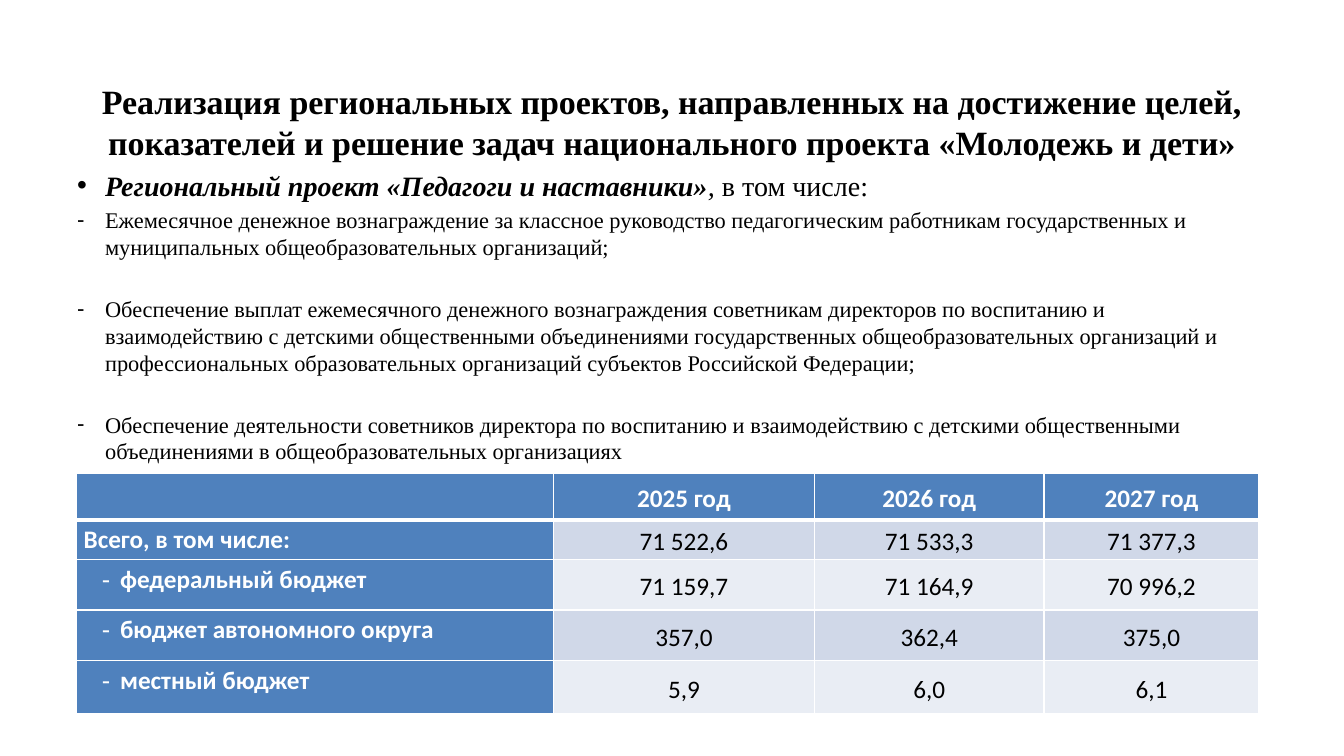
from dataclasses import dataclass

from lxml.etree import SubElement
from pptx import Presentation
from pptx.dml.color import RGBColor
from pptx.enum.text import MSO_ANCHOR, MSO_AUTO_SIZE, PP_ALIGN
from pptx.oxml.ns import qn
from pptx.util import Pt


@dataclass(frozen=True)
class Theme:
    black: RGBColor = RGBColor.from_string("000000")
    white: RGBColor = RGBColor.from_string("FFFFFF")
    header: RGBColor = RGBColor.from_string("4F81BD")
    bands: tuple = (RGBColor.from_string("D0D8E8"), RGBColor.from_string("E9EDF4"))
    serif: str = "Times New Roman"
    sans: str = "Calibri"
    title_size: float = 24.3
    lead_size: float = 20
    item_size: float = 16
    table_size: float = 18


THEME = Theme()

TITLE = ("Реализация региональных проектов, направленных на достижение целей, "
         "показателей и решение задач национального проекта «Молодежь и дети»")
PROJECT = "Региональный проект «Педагоги и наставники»"
MEASURES = [
    "Ежемесячное денежное вознаграждение за классное руководство педагогическим "
    "работникам государственных и муниципальных общеобразовательных организаций;",
    "Обеспечение выплат ежемесячного денежного вознаграждения советникам директоров "
    "по воспитанию и взаимодействию с детскими общественными объединениями "
    "государственных общеобразовательных организаций и профессиональных "
    "образовательных организаций субъектов Российской Федерации;",
    "Обеспечение деятельности советников директора по воспитанию и взаимодействию "
    "с детскими общественными объединениями в общеобразовательных организациях",
]
BUDGET = [
    ["", "2025 год", "2026 год", "2027 год"],
    ["Всего, в том числе:", "71 522,6", "71 533,3", "71 377,3"],
    ["федеральный бюджет", "71 159,7", "71 164,9", "70 996,2"],
    ["бюджет автономного округа", "357,0", "362,4", "375,0"],
    ["местный бюджет", "5,9", "6,0", "6,1"],
]
COLUMN_WIDTHS = [340.5, 186.5, 164, 153.5]
ROW_HEIGHTS = [33.5, 28.5, 36, 36, 38]


def style_span(span, font, size, color, bold=False, italic=False):
    span.font.name = font
    span.font.size = Pt(size)
    span.font.color.rgb = color
    span.font.bold = bold
    span.font.italic = italic


def set_bullet(para, mark, margin, hanging):
    properties = para._p.get_or_add_pPr()
    properties.set("marL", str(Pt(margin)))
    properties.set("indent", str(-Pt(hanging)))
    SubElement(properties, qn("a:buFont"), typeface="Arial")
    SubElement(properties, qn("a:buChar"), char=mark)


def add_title(page, text):
    title = page.shapes.title
    title.left, title.top, title.width, title.height = Pt(48), Pt(21.6), Pt(864), Pt(90)
    frame = title.text_frame
    frame.text = text
    frame.word_wrap = True
    frame.auto_size = MSO_AUTO_SIZE.NONE
    frame.vertical_anchor = MSO_ANCHOR.TOP
    frame.margin_top = Pt(36)
    para = frame.paragraphs[0]
    para.alignment = PP_ALIGN.CENTER
    style_span(para.runs[0], THEME.serif, THEME.title_size, THEME.black, bold=True)


def add_measures(page):
    box = page.shapes.add_textbox(Pt(48), Pt(116.6), Pt(857.5), Pt(408))
    frame = box.text_frame
    frame.word_wrap = True

    # Lead line with the project name emphasised
    lead = frame.paragraphs[0]
    lead.space_before = Pt(4)
    set_bullet(lead, "•", 20, 20)
    for text, bold, italic in [(PROJECT, True, True), (", ", False, True),
                               ("в том числе:", False, False)]:
        span = lead.add_run()
        span.text = text
        style_span(span, THEME.serif, THEME.lead_size, THEME.black, bold, italic)

    # Measures, set apart by paragraph spacing
    for index, text in enumerate(MEASURES):
        para = frame.add_paragraph()
        para.text = text
        para.space_before = Pt(25 if index else 3.2)
        set_bullet(para, "-", 20, 20)
        style_span(para.runs[0], THEME.serif, THEME.item_size, THEME.black)


def set_borders(cell, top, bottom):
    properties = cell._tc.get_or_add_tcPr()
    for position, (side, width) in enumerate(
            [("lnL", 1), ("lnR", 1), ("lnT", top), ("lnB", bottom)]):
        line = properties.makeelement(qn(f"a:{side}"), {"w": str(Pt(width))})
        fill = SubElement(line, qn("a:solidFill"))
        SubElement(fill, qn("a:srgbClr"), val=str(THEME.white))
        properties.insert(position, line)


def fill_cell(cell, text, row, column):
    is_label = column == 0
    is_heading = row == 0 or is_label
    cell.fill.solid()
    cell.fill.fore_color.rgb = THEME.header if is_heading else THEME.bands[(row - 1) % 2]
    set_borders(cell, top=3 if row == 1 else 1, bottom=3 if row == 0 else 1)
    cell.margin_left = cell.margin_right = Pt(5)
    cell.margin_top = cell.margin_bottom = Pt(0)
    cell.vertical_anchor = MSO_ANCHOR.TOP if is_label else MSO_ANCHOR.MIDDLE
    if not text:
        return
    cell.text_frame.text = text
    para = cell.text_frame.paragraphs[0]
    para.alignment = PP_ALIGN.LEFT if is_label else PP_ALIGN.CENTER
    para.line_spacing = 1.15
    para.space_after = Pt(10)
    if is_label and row > 1:
        set_bullet(para, "-", 26, 13)
    color = THEME.white if is_heading else THEME.black
    style_span(para.runs[0], THEME.sans, THEME.table_size, color, bold=is_heading)


def add_budget_table(page):
    frame = page.shapes.add_table(len(BUDGET), len(BUDGET[0]), Pt(54.8), Pt(337.8),
                                  Pt(sum(COLUMN_WIDTHS)), Pt(sum(ROW_HEIGHTS)))
    table = frame.table
    table.first_col = True
    for column, width in zip(table.columns, COLUMN_WIDTHS):
        column.width = Pt(width)
    for row, height in zip(table.rows, ROW_HEIGHTS):
        row.height = Pt(height)
    for row, values in enumerate(BUDGET):
        for column, text in enumerate(values):
            fill_cell(table.cell(row, column), text, row, column)


def main():
    deck = Presentation()
    deck.slide_width, deck.slide_height = Pt(960), Pt(540)
    page = deck.slides.add_slide(deck.slide_layouts[5])
    add_title(page, TITLE)
    add_measures(page)
    add_budget_table(page)
    deck.save("out.pptx")


if __name__ == "__main__":
    main()
